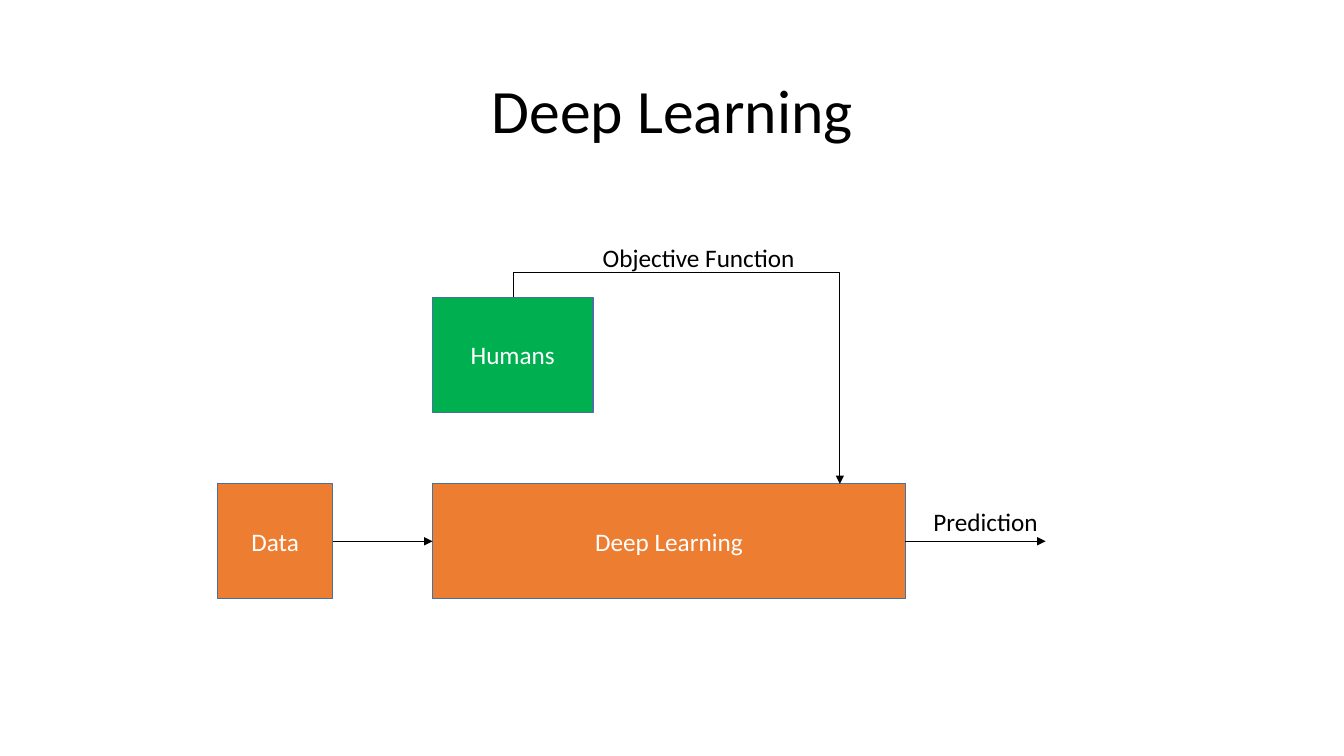
from lxml.etree import SubElement
from pptx import Presentation
from pptx.dml.color import RGBColor
from pptx.enum.shapes import MSO_CONNECTOR as CONN, MSO_SHAPE as SHAPE
from pptx.enum.text import MSO_ANCHOR as ANCHOR, PP_ALIGN as ALIGN
from pptx.oxml.ns import qn
from pptx.util import Inches, Pt

COLORS = {"text": "000000", "light": "FFFFFF", "orange": "ED7D31",
          "green": "00B050", "border": "43739E"}


def rgb(name):
    return RGBColor.from_string(COLORS[name])


def write(sp, text, size=18, color="text", align=ALIGN.LEFT,
          anchor=ANCHOR.TOP, spacing=None):
    tf = sp.text_frame
    tf.word_wrap = True
    tf.vertical_anchor = anchor
    p = tf.paragraphs[0]
    p.alignment = align
    p.line_spacing = spacing
    r = p.add_run()
    r.text = text
    r.font.name = "Calibri"
    r.font.size = Pt(size)
    r.font.color.rgb = rgb(color)


prs = Presentation()
prs.slide_width, prs.slide_height = Inches(13.33), Inches(7.5)
s = prs.slides.add_slide(prs.slide_layouts[5])

# Title
title = s.shapes.title
title.left, title.top = Inches(0.92), Inches(0.4)
title.width, title.height = Inches(11.5), Inches(1.45)
write(title, "Deep Learning", size=44, align=ALIGN.CENTER,
      anchor=ANCHOR.MIDDLE, spacing=0.9)

# Boxes
for text, x, y, w, fill in [("Data", 2.16, 4.8, 1.14, "orange"),
                            ("Deep Learning", 4.29, 4.8, 4.69, "orange"),
                            ("Humans", 4.29, 2.95, 1.59, "green")]:
    sp = s.shapes.add_shape(SHAPE.RECTANGLE, Inches(x), Inches(y),
                            Inches(w), Inches(1.14))
    sp.shadow.inherit = False
    sp.fill.solid()
    sp.fill.fore_color.rgb = rgb(fill)
    sp.line.color.rgb = rgb("border")
    sp.line.width = Pt(1)
    write(sp, text, color="light", align=ALIGN.CENTER, anchor=ANCHOR.MIDDLE)

# Arrow labels
for text, x, y, w in [("Prediction", 9.16, 4.97, 1.63),
                      ("Objective Function", 5.88, 2.35, 2.17)]:
    write(s.shapes.add_textbox(Inches(x), Inches(y), Inches(w), Inches(0.4)),
          text)

# Arrows; the elbow is laid out upright, then turned about its centre
x1, y1, x2, y2 = 5.09, 2.95, 8.33, 4.8
cx, cy = (x1 + x2) / 2, (y1 + y2) / 2
half_w, half_h = (y2 - y1) / 2, (x2 - x1) / 2
arrows = [(CONN.STRAIGHT, 3.3, 5.37, 4.29, 5.37),
          (CONN.STRAIGHT, 8.98, 5.37, 10.37, 5.37),
          (CONN.ELBOW, cx + half_w, cy - half_h, cx - half_w, cy + half_h)]
for kind, *ends in arrows:
    arrow = s.shapes.add_connector(kind, *[Inches(v) for v in ends])
    arrow.line.color.rgb = rgb("text")
    arrow.line.width = Pt(0.5)
    sp_pr = arrow.element.spPr
    SubElement(sp_pr.find(qn("a:ln")), qn("a:tailEnd"), type="triangle")
    SubElement(sp_pr, qn("a:effectLst"))
    if kind == CONN.ELBOW:
        sp_pr.find(qn("a:xfrm")).set("rot", str(270 * 60000))
        guides = sp_pr.find(qn("a:prstGeom")).find(qn("a:avLst"))
        SubElement(guides, qn("a:gd"), name="adj1", fmla="val -13500")

prs.save("out.pptx")
